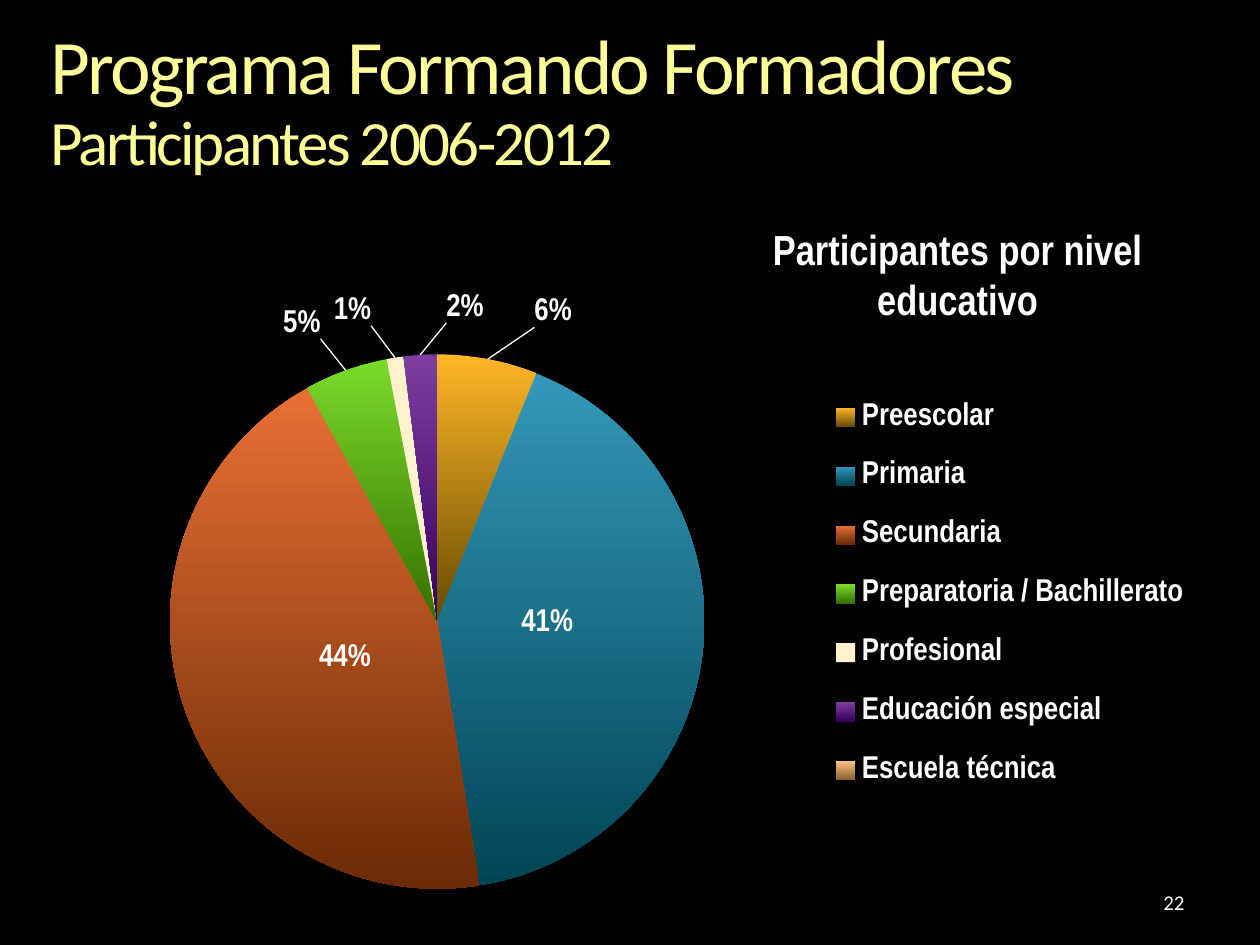
from dataclasses import dataclass

import pptx
import pptx.chart.data
import pptx.dml.color
import pptx.enum.chart
import pptx.enum.text
import pptx.oxml
import pptx.oxml.ns
import pptx.util

WIDTH, HEIGHT = 10, 7.5
ALIGN = pptx.enum.text.PP_ALIGN
ANCHOR = pptx.enum.text.MSO_ANCHOR
LABEL = pptx.enum.chart.XL_LABEL_POSITION


@dataclass(frozen=True)
class Theme:
    """Colours, fonts and type sizes of the slide."""
    back: str = "000000"
    ink: str = "FFFFFF"
    title: str = "FFFF99"
    body_font: str = "Calibri"
    chart_font: str = "Arial Narrow"
    title_size: int = 44
    subtitle_size: int = 36
    heading_size: int = 24
    chart_size: int = 18
    number_size: int = 12


THEME = Theme()

LEVELS = [
    ("Preescolar", 6, "FFB628", "664B00", LABEL.OUTSIDE_END, 0.04, -0.04),
    ("Primaria", 41, "3497B8", "004555", LABEL.CENTER, -0.02, -0.02),
    ("Secundaria", 44, "E87035", "6B2A05", LABEL.CENTER, 0.03, -0.01),
    ("Preparatoria / Bachillerato", 5, "7ADB2B", "357000", LABEL.OUTSIDE_END, -0.02, -0.04),
    ("Profesional", 1, "FFF2CC", "FFF2CC", LABEL.OUTSIDE_END, -0.02, -0.04),
    ("Educación especial", 2, "7D3DA1", "350060", LABEL.OUTSIDE_END, 0.04, -0.04),
    ("Escuela técnica", 0, "FFC47F", "8A6030", LABEL.OUTSIDE_END, 0.07, -0.04),
]


def rgb(value):
    """Return a colour from its hex form."""
    return pptx.dml.color.RGBColor.from_string(value)


def place(box):
    """Turn shares of the slide into left, top, width and height."""
    return [pptx.util.Inches(share * side) for share, side in zip(box, (WIDTH, HEIGHT) * 2)]


def style(font, size, color=THEME.ink, name=THEME.body_font, bold=False):
    """Set the common properties of a font."""
    font.size, font.name, font.bold = pptx.util.Pt(size), name, bold
    font.color.rgb = rgb(color)


def add_text(s, box, text, size, align=ALIGN.LEFT, anchor=ANCHOR.TOP, inset=None, **font):
    """Add a wrapped text box with one run and return its paragraph."""
    tf = s.shapes.add_textbox(*place(box)).text_frame
    tf.word_wrap, tf.vertical_anchor = True, anchor
    if inset is not None:
        tf.margin_left = tf.margin_top = tf.margin_right = tf.margin_bottom = inset
    p = tf.paragraphs[0]
    p.alignment = align
    r = p.add_run()
    r.text = text
    style(r.font, size, **font)
    return p


def add_title(s, box):
    """Add the two-line title with tight letter spacing."""
    p = add_text(s, box, "Programa Formando Formadores", THEME.title_size,
                 inset=0, color=THEME.title)
    p.line_spacing = 0.9
    p.add_line_break()
    r = p.add_run()
    r.text = "Participantes 2006-2012"
    style(r.font, THEME.subtitle_size, THEME.title)
    for r in p.runs:
        r.font._element.set("spc", "-150")


def chart_xml(body):
    """Parse a fragment of chart XML."""
    root = f"<c:root {pptx.oxml.ns.nsdecls('c', 'a')}>{body}</c:root>"
    return pptx.oxml.parse_xml(root)[0]


def layout(x, y, w=None, h=None, inner=False):
    """Build a manual layout for a plot, a legend or a label offset."""
    parts = '<c:layoutTarget val="inner"/>' if inner else ""
    if w is not None:
        parts += '<c:xMode val="edge"/><c:yMode val="edge"/>'
    sizes = zip("xywh", (x, y, w, h))
    parts += "".join(f'<c:{k} val="{v}"/>' for k, v in sizes if v is not None)
    return chart_xml(f"<c:layout><c:manualLayout>{parts}</c:manualLayout></c:layout>")


def set_layout(parent, new, after=None):
    """Replace a layout, placing it after the given child or first."""
    for old in parent.xpath("./c:layout"):
        parent.remove(old)
    parent.insert(0 if after is None else parent.index(after) + 1, new)


def add_slices(series):
    """Colour every slice and place its label."""
    for i, (_, _, light, dark, pos, dx, dy) in enumerate(LEVELS):
        point = series.points[i]
        fill = point.format.fill
        if light == dark:
            fill.solid()
            fill.fore_color.rgb = rgb(light)
        else:
            fill.gradient()
            fill.gradient_angle = 270
            for stop, color in zip(fill.gradient_stops, (light, dark)):
                stop.color.rgb = rgb(color)
        point.format.line.fill.background()
        style(point.data_label.font, THEME.chart_size, name=THEME.chart_font, bold=True)
        point.data_label.position = pos
        label = series._element.xpath(f"./c:dLbls/c:dLbl[c:idx/@val='{i}']")[0]
        set_layout(label, layout(dx, dy), label.xpath("./c:idx")[0])


def add_pie(s, box):
    """Add the pie of participants with its legend and leader lines."""
    data = pptx.chart.data.CategoryChartData()
    data.categories = [level[0] for level in LEVELS]
    data.add_series("Series 1", [level[1] for level in LEVELS])
    kind = pptx.enum.chart.XL_CHART_TYPE.PIE
    chart = s.shapes.add_chart(kind, *place(box), data).chart
    chart.has_title = False
    style(chart.font, THEME.chart_size)
    chart.plots[0].vary_by_categories = True
    add_slices(chart.plots[0].series[0])
    chart.has_legend = True
    chart.legend.position = pptx.enum.chart.XL_LEGEND_POSITION.RIGHT
    chart.legend.include_in_layout = False
    style(chart.legend.font, THEME.chart_size, name=THEME.chart_font, bold=True)
    root = chart.element
    for tag, value in (("showVal", "0"), ("showPercent", "1")):
        for flag in root.xpath(f".//c:{tag}"):
            flag.set("val", value)
    lines = chart_xml('<c:leaderLines><c:spPr><a:ln w="9525"><a:solidFill>'
                      f'<a:srgbClr val="{THEME.ink}"/></a:solidFill></a:ln></c:spPr></c:leaderLines>')
    root.xpath(".//c:showLeaderLines")[0].addnext(lines)
    set_layout(root.xpath(".//c:plotArea")[0], layout(0.09, 0.1, 0.48, 0.87, inner=True))
    legend = root.xpath(".//c:legend")[0]
    set_layout(legend, layout(0.67, 0.13, 0.33, 0.72), legend.xpath("./c:legendPos")[0])


def main():
    """Build and save the slide."""
    prs = pptx.Presentation()
    prs.slide_width, prs.slide_height = pptx.util.Inches(WIDTH), pptx.util.Inches(HEIGHT)
    s = prs.slides.add_slide(prs.slide_layouts[6])
    s.background.fill.solid()
    s.background.fill.fore_color.rgb = rgb(THEME.back)
    add_pie(s, (0.05, 0.31, 0.9, 0.65))
    add_text(s, (0.56, 0.23, 0.4, 0.12), "Participantes por nivel educativo",
             THEME.heading_size, ALIGN.CENTER, name=THEME.chart_font, bold=True)
    add_title(s, (0.04, 0.03, 0.92, 0.16))
    add_text(s, (0.72, 0.93, 0.23, 0.05), "22", THEME.number_size, ALIGN.RIGHT, ANCHOR.MIDDLE)
    prs.save("out.pptx")


if __name__ == "__main__":
    main()
